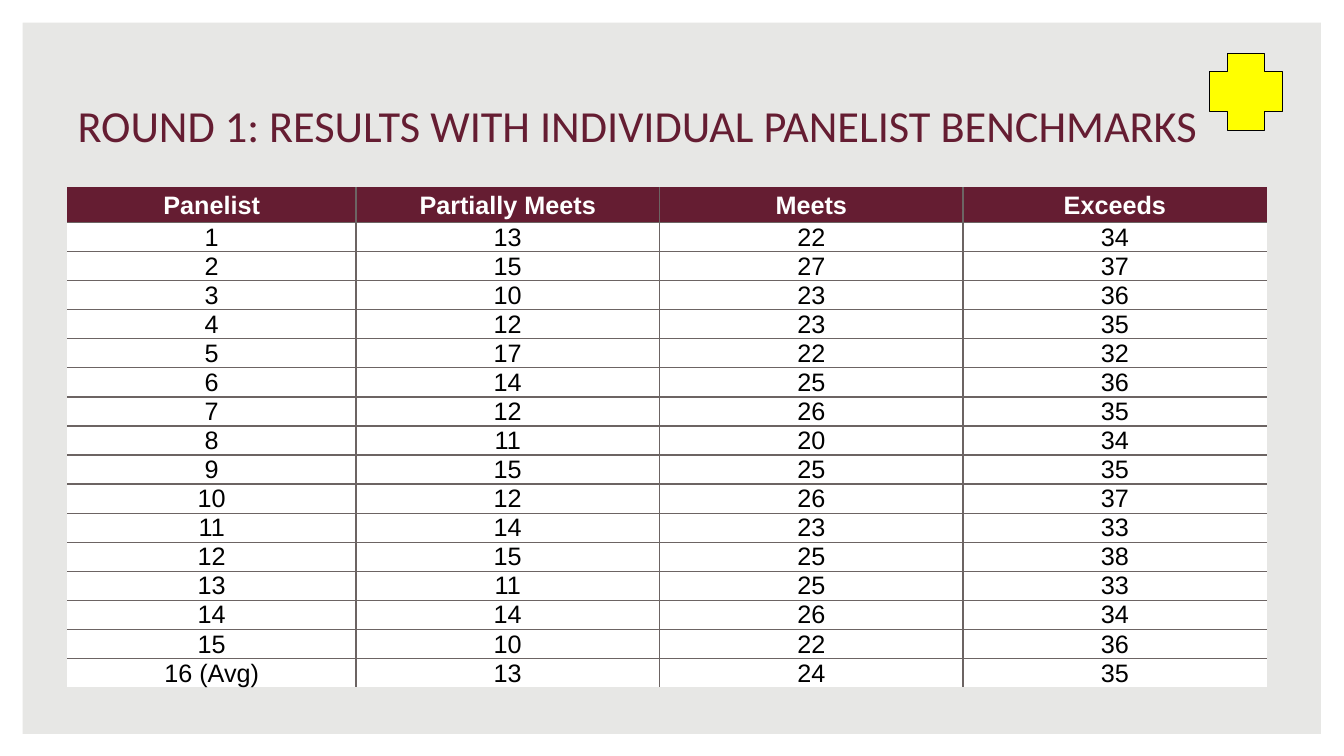
from dataclasses import dataclass

from lxml.etree import SubElement
from pptx import Presentation
from pptx.dml.color import RGBColor as RGB
from pptx.enum.shapes import MSO_SHAPE as SHAPE
from pptx.enum.text import MSO_ANCHOR as ANCHOR, MSO_AUTO_SIZE as AUTO, PP_ALIGN as ALIGN
from pptx.oxml.ns import qn
from pptx.util import Cm, Pt


@dataclass(frozen=True)
class Theme:
    page: str = "E7E7E5"
    white: str = "FFFFFF"
    black: str = "000000"
    maroon: str = "651D32"
    grid: str = "6C6463"
    marker: str = "FFFF00"
    title_font: str = "Calibri"
    table_font: str = "Arial"
    title_size: float = 31.7
    table_size: float = 18


THEME = Theme()
TITLE = "ROUND 1: RESULTS WITH INDIVIDUAL PANELIST BENCHMARKS"
HEADERS = ["Panelist", "Partially Meets", "Meets", "Exceeds"]
BENCHMARKS = [
    (13, 22, 34), (15, 27, 37), (10, 23, 36), (12, 23, 35),
    (17, 22, 32), (14, 25, 36), (12, 26, 35), (11, 20, 34),
    (15, 25, 35), (12, 26, 37), (14, 23, 33), (15, 25, 38),
    (11, 25, 33), (14, 26, 34), (10, 22, 36), (13, 24, 35),
]


def set_fill(target, color):
    target.fill.solid()
    target.fill.fore_color.rgb = RGB.from_string(color)


def style_text(p, font, size, color, align, bold=False):
    p.alignment = align
    for r in p.runs:
        r.font.name = font
        r.font.size = Pt(size)
        r.font.bold = bold
        r.font.color.rgb = RGB.from_string(color)


def add_preset(s, kind, box, fill, adjustment, line=None):
    sp = s.shapes.add_shape(kind, *map(Cm, box))
    sp.shadow.inherit = False
    sp.adjustments[0] = adjustment
    set_fill(sp, fill)
    if line:
        sp.line.color.rgb = RGB.from_string(line)
        sp.line.width = Pt(0.75)
    else:
        sp.line.fill.background()
    return sp


def place_title(s, text, box):
    title = s.shapes.title
    title.left, title.top, title.width, title.height = map(Cm, box)
    tf = title.text_frame
    tf.text = text
    tf.word_wrap = True
    tf.auto_size = AUTO.NONE
    tf.vertical_anchor = ANCHOR.BOTTOM
    style_text(tf.paragraphs[0], THEME.title_font, THEME.title_size, THEME.maroon, ALIGN.LEFT)
    return title


def set_borders(cell, inner_sides):
    tc_pr = cell._tc.get_or_add_tcPr()
    for i, side in enumerate("LRTB"):
        ln = SubElement(tc_pr, qn(f"a:ln{side}"), w=str(Pt(1)))
        if side in inner_sides:
            fill = SubElement(ln, qn("a:solidFill"))
            SubElement(fill, qn("a:srgbClr"), val=THEME.grid)
        else:
            SubElement(ln, qn("a:noFill"))
        tc_pr.insert(i, ln)


def format_cell(cell, text, header):
    cell.text = text
    cell.vertical_anchor = ANCHOR.MIDDLE
    cell.margin_left = cell.margin_right = cell.margin_top = Cm(0.02)
    cell.margin_bottom = 0
    set_fill(cell, THEME.maroon if header else THEME.white)
    style_text(cell.text_frame.paragraphs[0], THEME.table_font, THEME.table_size,
               THEME.white if header else THEME.black, ALIGN.CENTER, header)


def add_grid(s, rows, left, top, col_widths, header_height, row_height):
    heights = [header_height] + [row_height] * (len(rows) - 1)
    table = s.shapes.add_table(len(rows), len(col_widths), Cm(left), Cm(top),
                               Cm(sum(col_widths)), Cm(sum(heights))).table
    table.horz_banding = False
    for col, width in zip(table.columns, col_widths):
        col.width = Cm(width)
    for i, (values, height) in enumerate(zip(rows, heights)):
        table.rows[i].height = Cm(height)
        for j, value in enumerate(values):
            cell = table.cell(i, j)
            format_cell(cell, str(value), i == 0)
            inside = {"L": j > 0, "R": j < len(values) - 1,
                      "T": i > 0, "B": i < len(rows) - 1}
            set_borders(cell, [side for side, inner in inside.items() if inner])


def main():
    prs = Presentation()
    prs.slide_width, prs.slide_height = Cm(33.87), Cm(19.05)
    s = prs.slides.add_slide(prs.slide_layouts[5])
    set_fill(s.background, THEME.page)

    title = place_title(s, TITLE, (1.7, 0.97, 30.2, 2.97))
    frame = add_preset(s, SHAPE.FRAME, (0, 0, 33.87, 19.07), THEME.white, 0.03)
    title.element.addprevious(frame.element)

    last = len(BENCHMARKS)
    rows = [HEADERS]
    for number, scores in enumerate(BENCHMARKS, 1):
        rows.append([f"{number} (Avg)" if number == last else number, *scores])
    add_grid(s, rows, 1.7, 4.72, [7.27, 7.65, 7.65, 7.65], 0.89, 0.73)

    add_preset(s, SHAPE.CROSS, (30.48, 1.35, 1.85, 1.93), THEME.marker, 0.25, THEME.black)
    prs.save("out.pptx")


if __name__ == "__main__":
    main()
